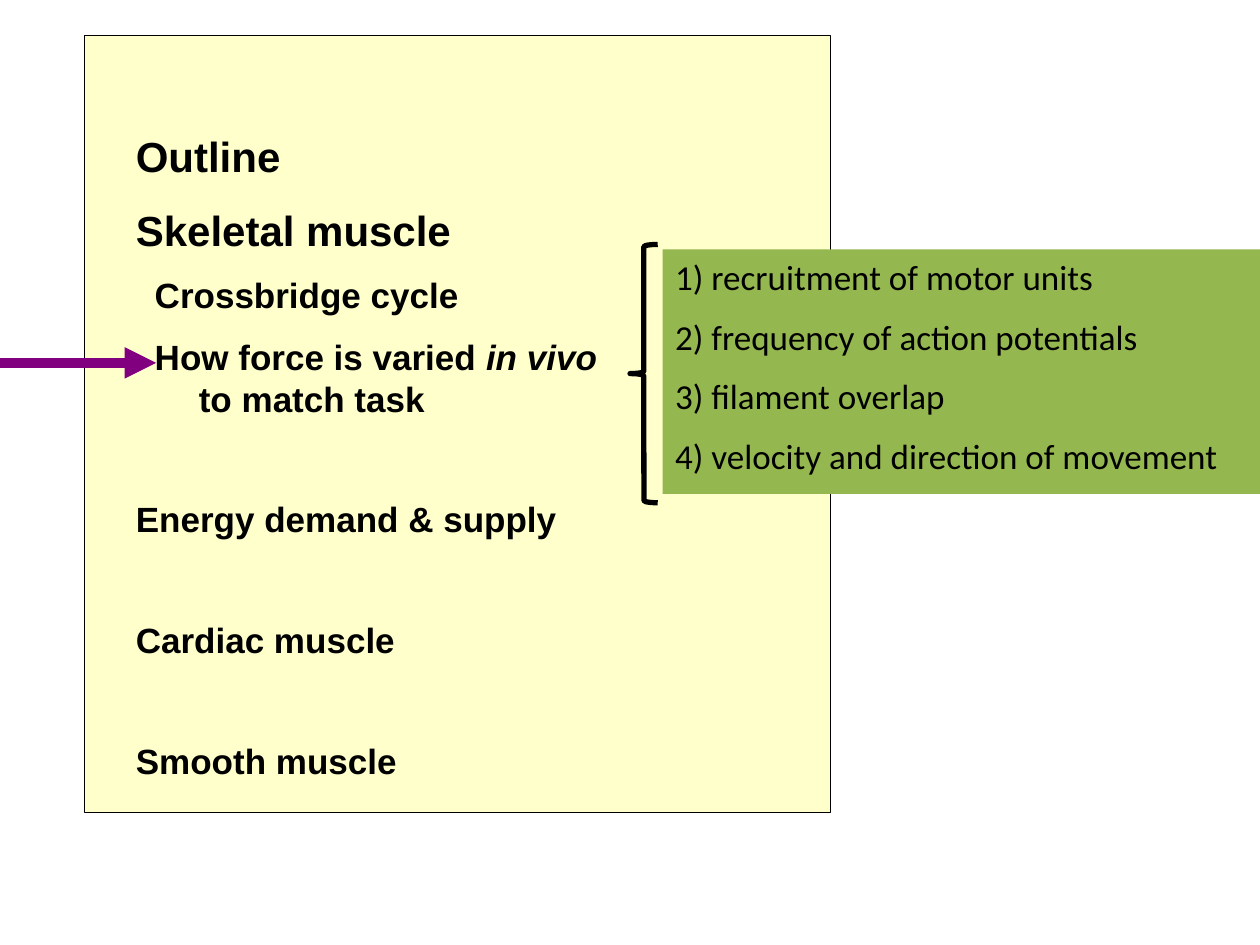
from lxml import etree
from pptx import Presentation
from pptx.dml.color import RGBColor
from pptx.enum.shapes import MSO_CONNECTOR, MSO_SHAPE
from pptx.enum.text import MSO_ANCHOR, PP_ALIGN
from pptx.oxml.ns import qn
from pptx.util import Inches, Pt

RECTANGLE = MSO_SHAPE.RECTANGLE
LEFT_BRACE = MSO_SHAPE.LEFT_BRACE
STRAIGHT = MSO_CONNECTOR.STRAIGHT
TOP = MSO_ANCHOR.TOP
LEFT = PP_ALIGN.LEFT

BLACK = RGBColor(0x00, 0x00, 0x00)
CREAM = RGBColor(0xFF, 0xFF, 0xCC)
GREEN = RGBColor(0x95, 0xB7, 0x4F)
PURPLE = RGBColor(0x80, 0x00, 0x80)

SECTION_GAP = 45
SUBTOPIC_INDENT = 0.15

# Each entry: runs of (text, italic), size, space before, first-line indent
OUTLINE = [
    ([("Outline", False)], 24, 0, 0),
    ([("Skeletal muscle", False)], 24, 13, 0),
    ([("Crossbridge cycle", False)], 20, 11, SUBTOPIC_INDENT),
    ([("How force is varied ", False), ("in vivo \t", True), ("to match task", False)],
     20, 11, SUBTOPIC_INDENT),
    ([("Energy demand & supply", False)], 20, SECTION_GAP, 0),
    ([("Cardiac muscle", False)], 20, SECTION_GAP, 0),
    ([("Smooth muscle", False)], 20, SECTION_GAP, 0),
]
FACTORS = [
    "1) recruitment of motor units",
    "2) frequency of action potentials",
    "3) filament overlap",
    "4) velocity and direction of movement",
]


def add_box(slide, kind, box, fill=None, line_width=None):
    """Add a preset shape with an optional fill and black outline."""
    s = slide.shapes.add_shape(kind, *map(Inches, box))
    s.shadow.inherit = False
    if fill is None:
        s.fill.background()
    else:
        s.fill.solid()
        s.fill.fore_color.rgb = fill
    if line_width is None:
        s.line.fill.background()
    else:
        s.line.color.rgb = BLACK
        s.line.width = Pt(line_width)
    return s


def add_paragraphs(s, entries, font, bold):
    """Fill a shape with left-aligned paragraphs, run by run."""
    tf = s.text_frame
    tf.word_wrap = True
    tf.vertical_anchor = TOP
    for i, (runs, size, before, indent) in enumerate(entries):
        p = tf.add_paragraph() if i else tf.paragraphs[0]
        p.alignment = LEFT
        p.space_before = Pt(before)
        if indent:
            pPr = p._p.get_or_add_pPr()
            pPr.set("marL", "0")
            pPr.set("indent", str(Inches(indent)))
        for text, italic in runs:
            r = p.add_run()
            r.text = text
            r.font.name = font
            r.font.size = Pt(size)
            r.font.bold = bold
            r.font.italic = italic
            r.font.color.rgb = BLACK


def add_arrow(slide, start, end, color, width):
    """Add a straight arrow without a shadow."""
    c = slide.shapes.add_connector(STRAIGHT, *map(Inches, start + end))
    c.line.color.rgb = color
    c.line.width = Pt(width)
    etree.SubElement(c.line._get_or_add_ln(), qn("a:tailEnd"), type="triangle")
    etree.SubElement(c._element.spPr, qn("a:effectLst"))


def main():
    """Build the muscle outline slide."""
    prs = Presentation()
    prs.slide_width, prs.slide_height = Inches(10), Inches(7.5)
    slide = prs.slides.add_slide(prs.slide_layouts[6])

    add_box(slide, RECTANGLE, (0.67, 0.28, 5.92, 6.17), CREAM, 0.75)
    outline = slide.shapes.add_textbox(*map(Inches, (0.98, 0.99, 3.86, 5.99)))
    add_paragraphs(outline, OUTLINE, "Arial", True)

    add_arrow(slide, (-1.93, 2.88), (1.24, 2.88), PURPLE, 6)
    factors = add_box(slide, RECTANGLE, (5.26, 1.98, 5.25, 1.94), GREEN)
    entries = [([(text, False)], 20, 10 if i else 0, 0) for i, text in enumerate(FACTORS)]
    add_paragraphs(factors, entries, "Calibri", False)
    brace = add_box(slide, LEFT_BRACE, (5, 1.94, 0.22, 2.05), line_width=3)
    brace.adjustments[0] = 0.08

    prs.save("out.pptx")


if __name__ == "__main__":
    main()
